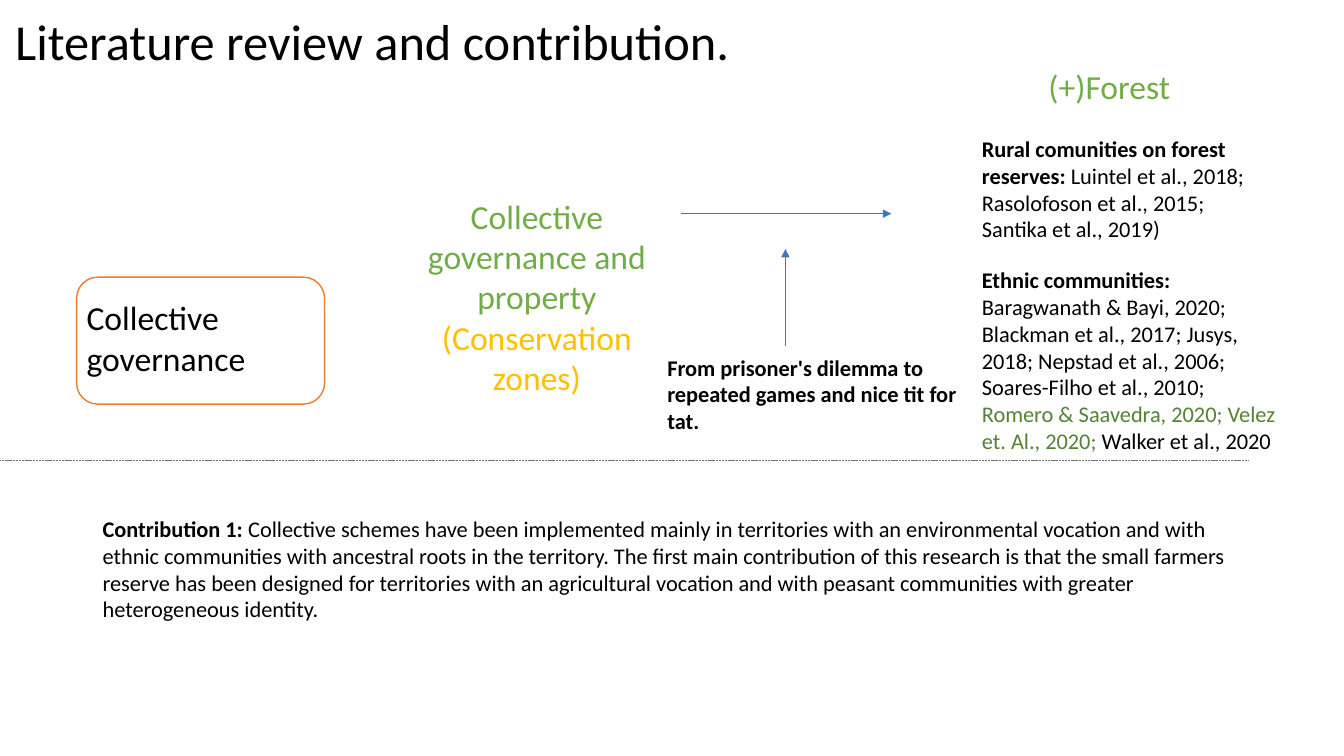
from pptx import Presentation
from pptx.dml.color import RGBColor
from pptx.enum.dml import MSO_LINE
from pptx.enum.shapes import MSO_CONNECTOR, MSO_SHAPE
from pptx.enum.text import MSO_ANCHOR, MSO_AUTO_SIZE, PP_ALIGN
from pptx.oxml.ns import qn
from pptx.util import Inches, Pt
from lxml.etree import SubElement

BLACK = RGBColor(0x00, 0x00, 0x00)
WHITE = RGBColor(0xFF, 0xFF, 0xFF)
GREEN = RGBColor(0x70, 0xAD, 0x47)
DARK_GREEN = RGBColor(0x54, 0x82, 0x35)
GOLD = RGBColor(0xFF, 0xC0, 0x00)
ORANGE = RGBColor(0xED, 0x7D, 0x31)
BLUE = RGBColor(0x44, 0x72, 0xC4)
GRAY = RGBColor(0x76, 0x71, 0x71)


def add_run(p, text, size=16, color=BLACK, bold=False):
    r = p.add_run()
    r.text = text
    r.font.name = "Calibri"
    r.font.size = Pt(size)
    r.font.color.rgb = color
    r.font.bold = bold


prs = Presentation()
prs.slide_width, prs.slide_height = Inches(13.33), Inches(7.5)
s = prs.slides.add_slide(prs.slide_layouts[5])

title = s.shapes.title
title.left, title.top = Inches(0.05), Inches(-0.29)
title.width, title.height = Inches(11.5), Inches(1.45)
tf = title.text_frame
tf.word_wrap = True
tf.auto_size = MSO_AUTO_SIZE.NONE
tf.vertical_anchor = MSO_ANCHOR.MIDDLE
p = tf.paragraphs[0]
p.alignment = PP_ALIGN.LEFT
p.line_spacing = 0.9
add_run(p, "Literature review and contribution.", size=36)

box = s.shapes.add_shape(MSO_SHAPE.ROUNDED_RECTANGLE, Inches(0.76), Inches(2.75),
                         Inches(2.46), Inches(1.26))
box.shadow.inherit = False
box.fill.solid()
box.fill.fore_color.rgb = WHITE
box.line.color.rgb = ORANGE
box.line.width = Pt(1)

LEFT, CENTER = PP_ALIGN.LEFT, PP_ALIGN.CENTER
texts = [
    (10.3, 0.6, 1.42, 0.5, LEFT, False, [("(+)Forest", {"size": 24, "color": GREEN})]),
    (9.64, 1.29, 2.93, 1.18, LEFT, True, [
        ("Rural comunities on forest reserves: ", {"bold": True}),
        ("Luintel et al., 2018; Rasolofoson et al., 2015; Santika et al., 2019)", {})]),
    (9.64, 2.59, 3.13, 1.99, LEFT, True, [
        ("Ethnic communities: ", {"bold": True}),
        ("Baragwanath & Bayi, 2020; Blackman et al., 2017; Jusys, 2018; "
         "Nepstad et al., 2006; Soares-Filho et al., 2010; ", {}),
        ("Romero & Saavedra, 2020; Velez et. Al., 2020; ", {"color": DARK_GREEN}),
        ("Walker et al., 2020", {})]),
    (6.52, 3.46, 3.13, 0.91, LEFT, True, [
        ("From prisoner's dilemma to repeated games and nice tit for tat.", {"bold": True})]),
    (3.89, 1.89, 2.87, 2.12, CENTER, True, [
        ("Collective governance and property ", {"size": 24, "color": GREEN}),
        ("(Conservation zones)", {"size": 24, "color": GOLD})]),
    (0.76, 2.9, 2.61, 0.91, LEFT, True, [("Collective governance", {"size": 24})]),
    (0.92, 5.06, 11.5, 1.18, LEFT, True, [
        ("Contribution 1: ", {"bold": True}),
        ("Collective schemes have been implemented mainly in territories with an "
         "environmental vocation and with ethnic communities with ancestral roots in the "
         "territory. The first main contribution of this research is that the small farmers "
         "reserve has been designed for territories with an agricultural vocation and with "
         "peasant communities with greater heterogeneous identity.", {})]),
]
for x, y, w, h, align, wrap, runs in texts:
    tf = s.shapes.add_textbox(Inches(x), Inches(y), Inches(w), Inches(h)).text_frame
    tf.word_wrap = wrap
    tf.auto_size = MSO_AUTO_SIZE.SHAPE_TO_FIT_TEXT
    p = tf.paragraphs[0]
    p.alignment = align
    for text, fmt in runs:
        add_run(p, text, **fmt)

lines = [
    (6.75, 2.12, 8.84, 2.12, BLUE, True),
    (7.79, 3.43, 7.79, 2.47, BLUE, True),
    (-0.04, 4.57, 12.39, 4.57, GRAY, False),
]
for x1, y1, x2, y2, color, arrow in lines:
    line = s.shapes.add_connector(MSO_CONNECTOR.STRAIGHT, Inches(x1), Inches(y1),
                                  Inches(x2), Inches(y2))
    line.line.color.rgb = color
    line.line.width = Pt(0.5)
    if arrow:
        SubElement(line.line._get_or_add_ln(), qn("a:tailEnd"), type="triangle")
    else:
        line.line.dash_style = MSO_LINE.SQUARE_DOT
    SubElement(line._element.spPr, qn("a:effectLst"))

prs.save("out.pptx")
